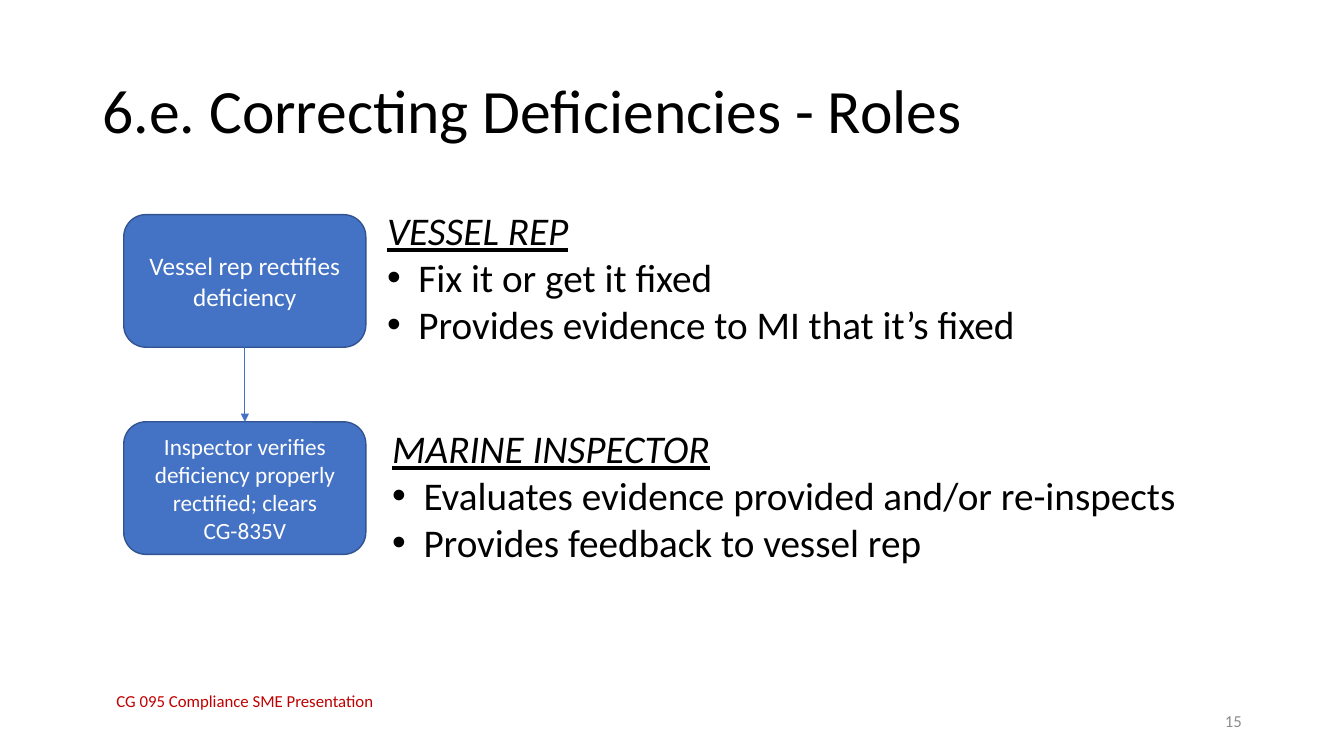
import pptx
import pptx.dml.color
import pptx.enum.shapes
import pptx.enum.text
import pptx.oxml
import pptx.oxml.ns
import pptx.util
from pptx.util import Cm

BLACK = pptx.dml.color.RGBColor(0x00, 0x00, 0x00)
WHITE = pptx.dml.color.RGBColor(0xFF, 0xFF, 0xFF)
BLUE = pptx.dml.color.RGBColor(0x44, 0x72, 0xC4)
DARK_BLUE = pptx.dml.color.RGBColor(0x32, 0x54, 0x91)
RED = pptx.dml.color.RGBColor(0xC0, 0x00, 0x00)
GREY = pptx.dml.color.RGBColor(0x8C, 0x8C, 0x8C)

ALIGN = pptx.enum.text.PP_ALIGN
ANCHOR = pptx.enum.text.MSO_ANCHOR

BULLET_INDENT = Cm(0.79)
STEP_HEIGHT = Cm(3.34)

STEPS = [
    ("Vessel rep rectifies deficiency", 18),
    ("Inspector verifies deficiency properly rectified; clears CG-835V", 16.6),
]
ROLES = [
    ("VESSEL REP",
     ["Fix it or get it fixed", "Provides evidence to MI that it’s fixed"],
     (Cm(9.5), Cm(5.08), Cm(21.62), Cm(3.84))),
    ("MARINE INSPECTOR",
     ["Evaluates evidence provided and/or re-inspects", "Provides feedback to vessel rep"],
     (Cm(9.63), Cm(10.57), Cm(22.02), Cm(3.84))),
]


def set_attributes(target, values):
    for name, value in values.items():
        setattr(target, name, value)


def place(shape, box):
    set_attributes(shape, dict(zip(("left", "top", "width", "height"), box)))


def format_frame(text_frame, anchor):
    set_attributes(text_frame, {
        "word_wrap": True,
        "auto_size": pptx.enum.text.MSO_AUTO_SIZE.NONE,
        "vertical_anchor": anchor,
    })


def write_paragraph(paragraph, text, size, color, alignment=ALIGN.LEFT, **emphasis):
    paragraph.alignment = alignment
    run = paragraph.add_run()
    run.text = text
    set_attributes(run.font, {"name": "Calibri", "size": pptx.util.Pt(size), **emphasis})
    run.font.color.rgb = color


def set_bullet(paragraph, bulleted):
    properties = paragraph._p.get_or_add_pPr()
    indent = BULLET_INDENT if bulleted else 0
    properties.set("marL", str(indent))
    properties.set("indent", str(-indent))
    if bulleted:
        font = pptx.oxml.ns.qn("a:buFont")
        properties.append(properties.makeelement(font, {"typeface": "Arial"}))
        character = pptx.oxml.ns.qn("a:buChar")
        properties.append(properties.makeelement(character, {"char": "•"}))
    else:
        properties.append(properties.makeelement(pptx.oxml.ns.qn("a:buNone"), {}))


def fill_title(title, box):
    place(title, box)
    format_frame(title.text_frame, ANCHOR.MIDDLE)
    paragraph = title.text_frame.paragraphs[0]
    paragraph.line_spacing = 0.9
    write_paragraph(paragraph, "6.e. Correcting Deficiencies - Roles", 44, BLACK)


def fill_role(placeholder, heading, duties, box):
    place(placeholder, box)
    text_frame = placeholder.text_frame
    format_frame(text_frame, ANCHOR.TOP)
    for index, text in enumerate([heading, *duties]):
        paragraph = text_frame.paragraphs[0] if index == 0 else text_frame.add_paragraph()
        paragraph.space_before = pptx.util.Pt(0)
        set_bullet(paragraph, index > 0)
        write_paragraph(paragraph, text, 28, BLACK, italic=index == 0, underline=index == 0)


def add_step(slide, text, size, box):
    step = slide.shapes.add_shape(pptx.enum.shapes.MSO_SHAPE.ROUNDED_RECTANGLE, *box)
    step.shadow.inherit = False
    step.fill.solid()
    step.fill.fore_color.rgb = BLUE
    step.line.color.rgb = DARK_BLUE
    step.line.width = pptx.util.Pt(1)
    format_frame(step.text_frame, ANCHOR.MIDDLE)
    write_paragraph(step.text_frame.paragraphs[0], text, size, WHITE, ALIGN.CENTER)
    return step


def add_arrow(slide, upper, lower):
    arrow = slide.shapes.add_connector(pptx.enum.shapes.MSO_CONNECTOR.STRAIGHT, 0, 0, 0, 0)
    arrow.begin_connect(upper, 2)
    arrow.end_connect(lower, 0)
    arrow.line.color.rgb = BLUE
    arrow.line.width = pptx.util.Pt(0.5)
    line = arrow.line._get_or_add_ln()
    line.append(line.makeelement(pptx.oxml.ns.qn("a:tailEnd"), {"type": "triangle"}))
    properties = arrow._element.spPr
    properties.append(properties.makeelement(pptx.oxml.ns.qn("a:effectLst"), {}))


def add_flow(slide, box):
    """Stack the steps from the top to the bottom of the box, joined by an arrow."""
    left, top, width, height = box
    pitch = (height - STEP_HEIGHT) // (len(STEPS) - 1)
    steps = [
        add_step(slide, text, size, (left, top + index * pitch, width, STEP_HEIGHT))
        for index, (text, size) in enumerate(STEPS)
    ]
    for upper, lower in zip(steps, steps[1:]):
        add_arrow(slide, upper, lower)


def add_footer_text(slide, text, color, alignment, box):
    footer = slide.shapes.add_textbox(*box)
    format_frame(footer.text_frame, ANCHOR.MIDDLE)
    write_paragraph(footer.text_frame.paragraphs[0], text, 12, color, alignment)


def add_roles_slide(presentation):
    two_content = presentation.slide_layouts[3]
    slide = presentation.slides.add_slide(two_content)
    fill_title(slide.shapes.title, (Cm(2.33), Cm(1.01), Cm(29.21), Cm(3.68)))
    add_flow(slide, (Cm(3.12), Cm(5.41), Cm(6.1), Cm(8.56)))
    for index, (heading, duties, box) in enumerate(ROLES, start=1):
        fill_role(slide.placeholders[index], heading, duties, box)
    add_footer_text(slide, "CG 095 Compliance SME Presentation", RED, ALIGN.CENTER,
                    (Cm(0.46), Cm(17.15), Cm(11.43), Cm(1.01)))
    add_footer_text(slide, "15", GREY, ALIGN.RIGHT,
                    (Cm(23.93), Cm(17.65), Cm(7.62), Cm(1.01)))


def main():
    presentation = pptx.Presentation()
    presentation.slide_width = Cm(33.87)
    presentation.slide_height = Cm(19.05)
    add_roles_slide(presentation)
    presentation.save("out.pptx")


if __name__ == "__main__":
    main()
